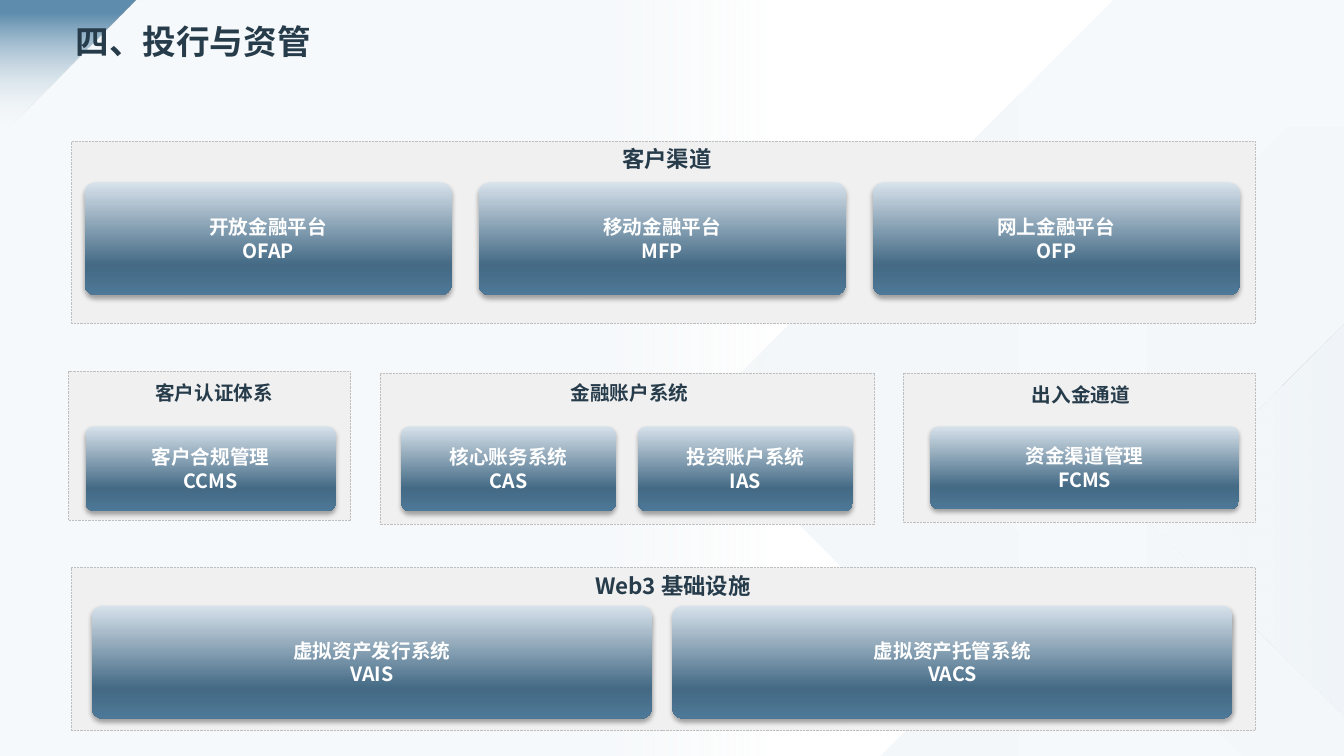
from dataclasses import dataclass
from typing import Any

import pptx
import pptx.dml.color
import pptx.enum.dml
import pptx.enum.shapes
import pptx.enum.text
import pptx.oxml
import pptx.oxml.ns
import pptx.util

Pt = pptx.util.Pt
RGBColor = pptx.dml.color.RGBColor
Preset = pptx.enum.shapes.MSO_SHAPE
Align = pptx.enum.text.PP_ALIGN
Anchor = pptx.enum.text.MSO_ANCHOR

INK = RGBColor(0x27, 0x3C, 0x4B)
WHITE = RGBColor(0xFF, 0xFF, 0xFF)
BLACK = RGBColor(0x00, 0x00, 0x00)
PANEL_GREY = RGBColor(0xF0, 0xF0, 0xF0)
BORDER_GREY = RGBColor(0xBF, 0xBF, 0xBF)
MIST = RGBColor(0xF6, 0xF9, 0xFB)
HAZE = RGBColor(0xF3, 0xF7, 0xF9)
FROST = RGBColor(0xEF, 0xF4, 0xF8)
CORNER_BLUE = RGBColor(0x5F, 0x8D, 0xAD)
BOX_LIGHT = RGBColor(0xD7, 0xE2, 0xEB)
BOX_DARK = RGBColor(0x44, 0x6A, 0x85)
BOX_BLUE = RGBColor(0x4D, 0x78, 0x97)

FONT = "Noto Sans CJK SC"
WIDTH, HEIGHT = 960, 540


@dataclass(frozen=True)
class Frame:
    left: float
    top: float
    width: float
    height: float


@dataclass(frozen=True)
class Stop:
    position: int
    color: RGBColor
    opacity: int = 100


@dataclass(frozen=True)
class Facet:
    points: tuple[tuple[float, float], ...]
    stops: tuple[Stop, ...]
    angle: int


@dataclass(frozen=True)
class Panel:
    frame: Frame
    heading: str
    heading_frame: Frame
    heading_size: int
    heading_spacing: float
    first_box: Frame
    pitch: float
    systems: tuple[tuple[str, str], ...]


BOX_STOPS = (Stop(0, BOX_LIGHT), Stop(73, BOX_DARK), Stop(100, BOX_BLUE))
FACET_STOPS = (Stop(0, MIST), Stop(100, HAZE))

FACETS = (
    Facet(((795.6, 0), (960, 0), (960, 540), (629.3, 540), (682.6, 486.7), (496.1, 299.5)),
          FACET_STOPS, 180),
    Facet(((919.4, 90.7), (960, 90.7), (960, 540), (887.8, 540), (679, 331.2)), FACET_STOPS, 0),
    Facet(((960, 231.1), (960, 511.9), (819.4, 371.5)),
          (Stop(0, MIST), Stop(57, HAZE), Stop(100, FROST, 70)), 0),
)

PANELS = (
    Panel(Frame(51.1, 100.8, 845.3, 130.3), "客户渠道", Frame(381.6, 97.9, 189.4, 20.9), 16, 1.1,
          Frame(60.5, 130.3, 262.1, 80.6), 281.5,
          (("开放金融平台", "OFAP"), ("移动金融平台", "MFP"), ("网上金融平台", "OFP"))),
    Panel(Frame(49, 265, 201.6, 106.6), "客户认证体系", Frame(97.2, 272.9, 111.6, 20.2), 14, 0.7,
          Frame(61.2, 304.6, 178.6, 60.5), 0, (("客户合规管理", "CCMS"),)),
    Panel(Frame(271.4, 266.4, 353.5, 108), "金融账户系统", Frame(386.6, 272.9, 126, 23), 14, 0.7,
          Frame(286.6, 304.6, 153.4, 60.5), 169.2,
          (("核心账务系统", "CAS"), ("投资账户系统", "IAS"))),
    Panel(Frame(645.1, 266.4, 251.3, 106.6), "出入金通道", Frame(716.4, 274.3, 111.6, 20.2), 14, 0.7,
          Frame(664.6, 304.6, 220.3, 59), 0, (("资金渠道管理", "FCMS"),)),
    Panel(Frame(51.1, 405.4, 845.3, 116.6), "Web3 基础设施", Frame(342, 403.2, 277.2, 20.9), 16, 1.1,
          Frame(65.5, 432.7, 400.3, 80.6), 414.7,
          (("虚拟资产发行系统", "VAIS"), ("虚拟资产托管系统", "VACS"))),
)


def apply_format(target: Any, values: dict[str, Any]) -> None:
    for name, value in values.items():
        setattr(target, name, value)


def place(frame: Frame) -> tuple[int, ...]:
    return tuple(Pt(length) for length in (frame.left, frame.top, frame.width, frame.height))


def color_xml(color: RGBColor, opacity: int) -> str:
    return f'<a:srgbClr val="{color}"><a:alpha val="{opacity * 1000}"/></a:srgbClr>'


def paint_gradient(shape: Any, stops: tuple[Stop, ...], angle: int) -> None:
    shape.shadow.inherit = False
    shape.line.fill.background()
    shape.fill.background()
    stop_xml = "".join(
        f'<a:gs pos="{stop.position * 1000}">{color_xml(stop.color, stop.opacity)}</a:gs>'
        for stop in stops)
    gradient = pptx.oxml.parse_xml(
        f'<a:gradFill {pptx.oxml.ns.nsdecls("a")} rotWithShape="1"><a:gsLst>{stop_xml}</a:gsLst>'
        f'<a:lin ang="{angle * 60000}" scaled="0"/></a:gradFill>')
    properties = shape._element.spPr
    properties.replace(properties.find(pptx.oxml.ns.qn("a:noFill")), gradient)


def cast_shadow(shape: Any) -> None:
    effects = shape._element.spPr.find(pptx.oxml.ns.qn("a:effectLst"))
    effects.append(pptx.oxml.parse_xml(
        f'<a:outerShdw {pptx.oxml.ns.nsdecls("a")} blurRad="{Pt(3.5)}" dist="{Pt(2.2)}" '
        f'dir="5400000" algn="t" rotWithShape="0">{color_xml(BLACK, 32)}</a:outerShdw>'))


def write_line(paragraph: Any, text: str, size: int, color: RGBColor, layout: dict[str, Any]) -> None:
    apply_format(paragraph, layout)
    run = paragraph.add_run()
    run.text = text
    apply_format(run.font, {"name": FONT, "size": Pt(size), "bold": True})
    run.font.color.rgb = color
    east_asian = pptx.oxml.parse_xml(f'<a:ea {pptx.oxml.ns.nsdecls("a")} typeface="{FONT}"/>')
    run.font._element.find(pptx.oxml.ns.qn("a:latin")).addnext(east_asian)


def draw_heading(shapes: Any, frame: Frame, text: str, size: int, layout: dict[str, Any],
                 margins: dict[str, Any]) -> None:
    heading = shapes.add_textbox(*place(frame)).text_frame
    apply_format(heading, {"word_wrap": True, **margins})
    write_line(heading.paragraphs[0], text, size, INK, layout)


def draw_facet(shapes: Any, facet: Facet) -> None:
    start, *corners = facet.points
    outline = shapes.build_freeform(Pt(start[0]), Pt(start[1]))
    outline.add_line_segments([(Pt(x), Pt(y)) for x, y in corners], close=True)
    paint_gradient(outline.convert_to_shape(), facet.stops, facet.angle)


def draw_backdrop(shapes: Any) -> None:
    for facet in FACETS:
        draw_facet(shapes, facet)
    veil = shapes.add_shape(Preset.RECTANGLE, *place(Frame(0, 0, WIDTH, HEIGHT)))
    paint_gradient(veil, (Stop(45, MIST), Stop(58, MIST, 0)), 0)
    corner = shapes.add_shape(Preset.RIGHT_TRIANGLE, *place(Frame(0, 0, 97.2, 97.2)))
    corner.rotation = 90
    paint_gradient(corner, (Stop(10, CORNER_BLUE), Stop(95, MIST, 0)), 0)


def draw_system(shapes: Any, frame: Frame, lines: tuple[str, str]) -> None:
    box = shapes.add_shape(Preset.ROUNDED_RECTANGLE, *place(frame))
    box.adjustments[0] = 0.1
    paint_gradient(box, BOX_STOPS, 90)
    cast_shadow(box)
    label = box.text_frame
    apply_format(label, {"word_wrap": True, "vertical_anchor": Anchor.MIDDLE})
    for index, text in enumerate(lines):
        paragraph = label.add_paragraph() if index else label.paragraphs[0]
        write_line(paragraph, text, 14, WHITE, {"alignment": Align.CENTER})


def draw_panel(shapes: Any, panel: Panel) -> None:
    area = shapes.add_shape(Preset.RECTANGLE, *place(panel.frame))
    area.shadow.inherit = False
    area.fill.solid()
    area.fill.fore_color.rgb = PANEL_GREY
    area.line.color.rgb = BORDER_GREY
    apply_format(area.line, {"width": Pt(0.5), "dash_style": pptx.enum.dml.MSO_LINE.ROUND_DOT})
    draw_heading(shapes, panel.heading_frame, panel.heading, panel.heading_size,
                 {"alignment": Align.CENTER, "line_spacing": panel.heading_spacing}, {})
    first = panel.first_box
    for index, lines in enumerate(panel.systems):
        left = first.left + index * panel.pitch
        draw_system(shapes, Frame(left, first.top, first.width, first.height), lines)


def main() -> None:
    deck = pptx.Presentation()
    apply_format(deck, {"slide_width": Pt(WIDTH), "slide_height": Pt(HEIGHT)})
    shapes = deck.slides.add_slide(deck.slide_layouts[6]).shapes
    draw_backdrop(shapes)
    draw_heading(shapes, Frame(46.8, 18, 882, 36.7), "四、投行与资管", 24,
                 {"line_spacing": 0.9, "space_before": Pt(10)}, {"margin_top": 0})
    for panel in PANELS:
        draw_panel(shapes, panel)
    deck.save("out.pptx")


if __name__ == "__main__":
    main()
